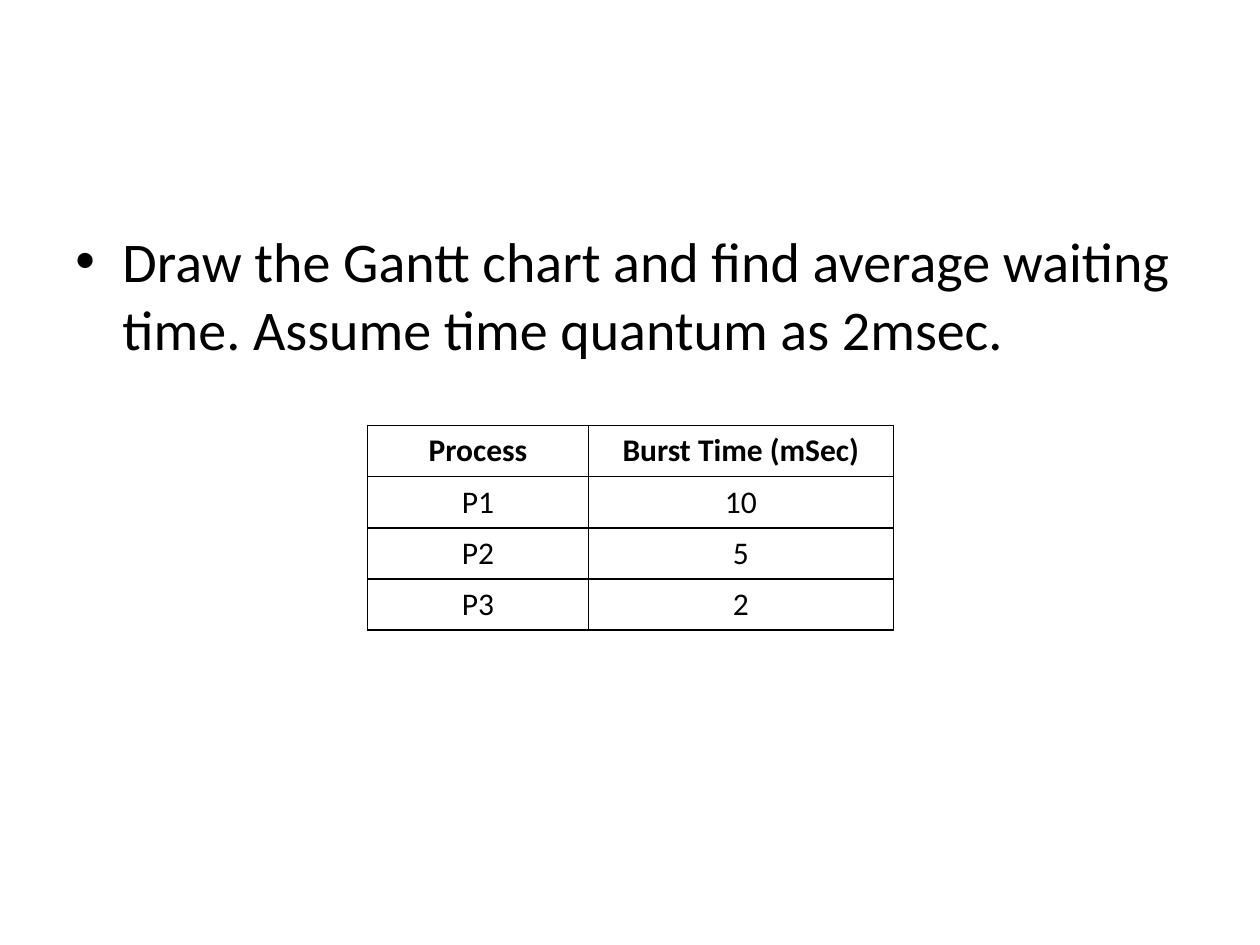
import pptx
import pptx.dml.color
import pptx.enum.text
import pptx.oxml
import pptx.oxml.ns
import pptx.util
from pptx.util import Cm


def colour(value):
    return pptx.dml.color.RGBColor.from_string(value)


class SlideBuilder:
    font = "Calibri"
    ink = "000000"
    border_width = pptx.util.Pt(1)

    def __init__(self, presentation):
        self.slide = presentation.slides.add_slide(presentation.slide_layouts[6])

    def format_runs(self, paragraph, size, bold=False):
        for run in paragraph.runs:
            run.font.name = self.font
            run.font.size = pptx.util.Pt(size)
            run.font.bold = bold
            run.font.color.rgb = colour(self.ink)

    def bullet_text(self, left, top, width, height, text, size, indent):
        shape = self.slide.shapes.add_textbox(left, top, width, height)
        shape.text_frame.word_wrap = True
        shape.text_frame.text = text
        paragraph = shape.text_frame.paragraphs[0]
        paragraph.space_before = pptx.util.Pt(size * 0.2)
        self.format_runs(paragraph, size)
        properties = paragraph._p.get_or_add_pPr()
        properties.set("marL", str(indent))
        properties.set("indent", str(-indent))
        namespace = pptx.oxml.ns.nsdecls("a")
        for tag in ('buFont typeface="Arial"', 'buChar char="•"'):
            properties.append(pptx.oxml.parse_xml(f"<a:{tag} {namespace}/>"))

    def border_cell(self, cell):
        properties = cell._tc.get_or_add_tcPr()
        namespace = pptx.oxml.ns.nsdecls("a")
        for position, side in enumerate(("lnL", "lnR", "lnT", "lnB")):
            line = pptx.oxml.parse_xml(
                f'<a:{side} {namespace} w="{self.border_width}"><a:solidFill>'
                f'<a:srgbClr val="{self.ink}"/></a:solidFill></a:{side}>'
            )
            properties.insert(position, line)

    def table(self, left, top, column_widths, row_height, rows, size):
        table = self.slide.shapes.add_table(
            len(rows), len(column_widths), left, top,
            sum(column_widths), row_height * len(rows),
        ).table
        table.horz_banding = False
        for column, width in zip(table.columns, column_widths):
            column.width = width
        for row_index, values in enumerate(rows):
            table.rows[row_index].height = row_height
            for column_index, value in enumerate(values):
                cell = table.cell(row_index, column_index)
                cell.fill.background()
                self.border_cell(cell)
                cell.text_frame.text = value
                paragraph = cell.text_frame.paragraphs[0]
                paragraph.alignment = pptx.enum.text.PP_ALIGN.CENTER
                self.format_runs(paragraph, size, bold=row_index == 0)


def main():
    presentation = pptx.Presentation()
    presentation.slide_width = Cm(25.4)
    presentation.slide_height = Cm(19.05)
    builder = SlideBuilder(presentation)
    builder.bullet_text(
        Cm(1.27), Cm(4.45), Cm(22.86), Cm(12.57),
        "Draw the Gantt chart and find average waiting time. "
        "Assume time quantum as 2msec.",
        size=32, indent=Cm(0.95),
    )
    processes = [
        ("Process", "Burst Time (mSec)"),
        ("P1", "10"),
        ("P2", "5"),
        ("P3", "2"),
    ]
    builder.table(
        Cm(7.41), Cm(8.58), [Cm(4.45), Cm(6.15)], Cm(1.03), processes, size=18
    )
    presentation.save("out.pptx")


if __name__ == "__main__":
    main()
